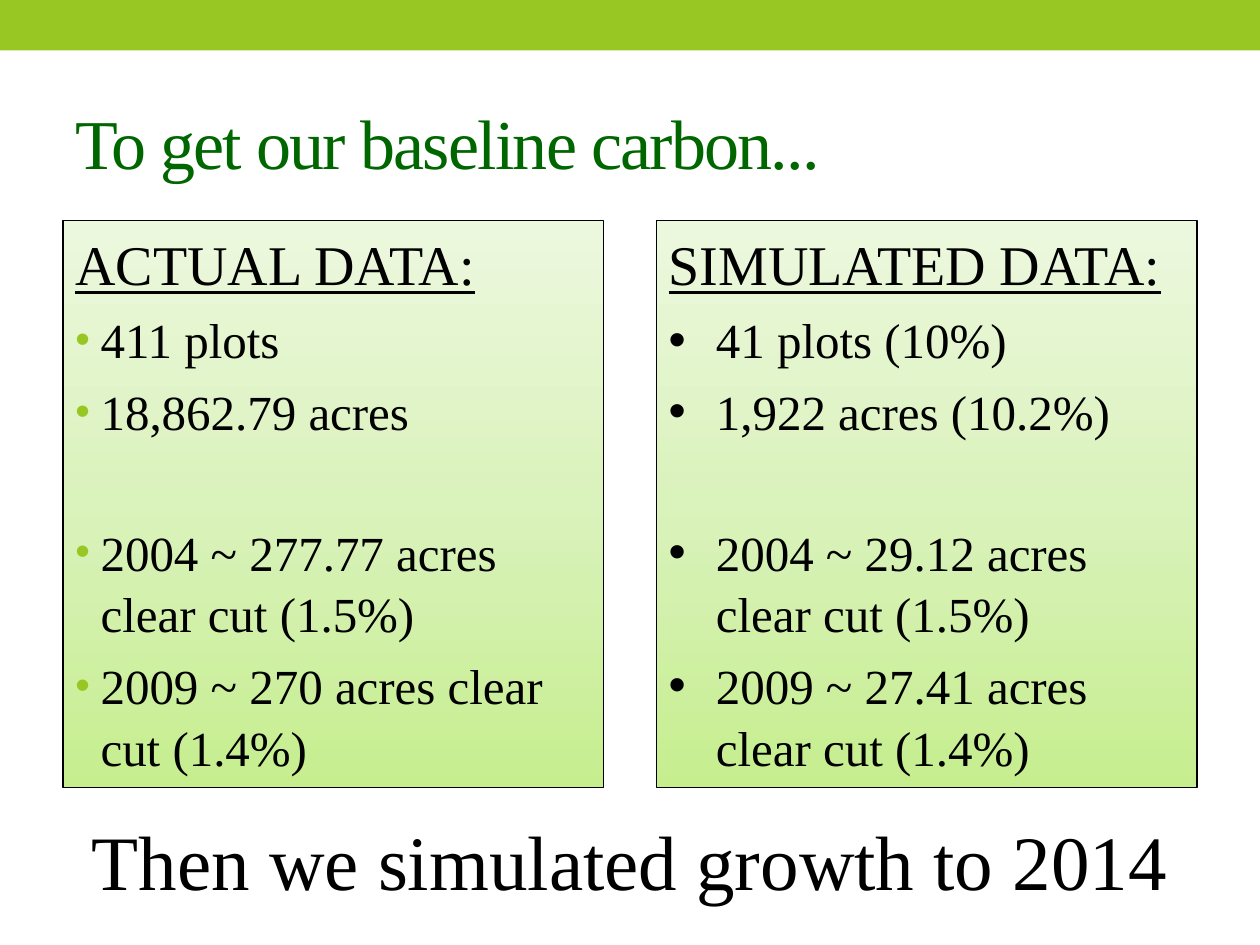
import copy

import pptx
import pptx.dml.color
import pptx.enum.shapes
import pptx.enum.text
import pptx.oxml
import pptx.oxml.ns
import pptx.util

Pt = pptx.util.Pt
ALIGN = pptx.enum.text.PP_ALIGN
ANCHOR = pptx.enum.text.MSO_ANCHOR
RECTANGLE = pptx.enum.shapes.MSO_SHAPE.RECTANGLE
FONT = "Times New Roman"
COLORS = {
    "accent": "98C723",
    "title": "006600",
    "text": "000000",
    "panel_bottom": "C6EE8F",
    "panel_middle": "DAF2BC",
    "panel_top": "ECF8DE",
}


def rgb(name):
    """Return the named colour."""
    return pptx.dml.color.RGBColor.from_string(COLORS[name])


def format_paragraph(paragraph, size, color="text", underline=False):
    """Format every run of a paragraph."""
    for run in paragraph.runs:
        run.font.name = FONT
        run.font.size = Pt(size)
        run.font.color.rgb = rgb(color)
        run.font.underline = underline


def add_rectangle(slide, box):
    """Add a shadowless rectangle in the box."""
    shape = slide.shapes.add_shape(RECTANGLE, *map(Pt, box))
    shape.shadow.inherit = False
    return shape


def add_banner(slide, box):
    """Add the plain band in the box."""
    banner = add_rectangle(slide, box)
    banner.fill.solid()
    banner.fill.fore_color.rgb = rgb("accent")
    banner.line.fill.background()


def add_line_of_text(slide, box, text, size, color, align, spacing=0):
    """Add one vertically centred line of text in the box."""
    frame = slide.shapes.add_textbox(*map(Pt, box)).text_frame
    frame.word_wrap = True
    frame.vertical_anchor = ANCHOR.MIDDLE
    frame.text = text
    paragraph = frame.paragraphs[0]
    paragraph.alignment = align
    format_paragraph(paragraph, size, color)
    if spacing:
        paragraph.runs[0].font._element.set("spc", str(spacing * 100))


def fill_gradient(shape):
    """Fill a shape with the three panel greens, from bottom to top."""
    shape.fill.gradient()
    shape.fill.gradient_angle = 90
    stop_list = shape._element.spPr.find(".//" + pptx.oxml.ns.qn("a:gsLst"))
    stop_list.append(copy.deepcopy(stop_list[0]))
    names = ("panel_bottom", "panel_middle", "panel_top")
    for index, (stop, name) in enumerate(zip(shape.fill.gradient_stops, names)):
        stop.color.rgb = rgb(name)
        stop.position = index / 2


def add_bullet(paragraph, indent, color, percent):
    """Give a paragraph a hanging bullet."""
    properties = paragraph._p.get_or_add_pPr()
    properties.set("marL", str(Pt(indent)))
    properties.set("indent", str(-Pt(indent)))
    namespace = pptx.oxml.ns.nsdecls("a")
    for markup in (
        f'<a:buClr {namespace}><a:srgbClr val="{COLORS[color]}"/></a:buClr>',
        f'<a:buSzPct {namespace} val="{percent * 1000}"/>',
        f'<a:buFont {namespace} typeface="Arial"/>',
        f'<a:buChar {namespace} char="•"/>',
    ):
        properties.append(pptx.oxml.parse_xml(markup))


def add_panel(slide, box, heading, groups, indent, bullet_color, bullet_percent):
    """Add a gradient panel with a heading and groups of bullets."""
    panel = add_rectangle(slide, box)
    fill_gradient(panel)
    panel.line.color.rgb = rgb("text")
    panel.line.width = Pt(0.75)
    frame = panel.text_frame
    frame.word_wrap = True
    frame.vertical_anchor = ANCHOR.TOP
    frame.text = heading
    title = frame.paragraphs[0]
    title.alignment = ALIGN.LEFT
    title.line_spacing = 1.05
    title.space_before = Pt(6.4)
    format_paragraph(title, 32, underline=True)
    for group_index, group in enumerate(groups):
        for item_index, item in enumerate(group):
            paragraph = frame.add_paragraph()
            paragraph.text = item
            paragraph.alignment = ALIGN.LEFT
            paragraph.line_spacing = 1.05
            starts_later_group = group_index > 0 and item_index == 0
            paragraph.space_before = Pt(45 if starts_later_group else 5.6)
            add_bullet(paragraph, indent, bullet_color, bullet_percent)
            format_paragraph(paragraph, 28)


def main():
    """Build and save the baseline carbon slide."""
    presentation = pptx.Presentation()
    presentation.slide_width = Pt(720)
    presentation.slide_height = Pt(540)
    slide = presentation.slides.add_slide(presentation.slide_layouts[6])
    add_banner(slide, (0, 0, 720, 28.8))
    add_line_of_text(slide, (36, 42, 648, 78), "To get our baseline carbon...",
                     40, "title", ALIGN.LEFT, -1)
    actual = (
        ("411 plots", "18,862.79 acres"),
        ("2004 ~ 277.77 acres clear cut (1.5%)", "2009 ~ 270 acres clear cut (1.4%)"),
    )
    simulated = (
        ("41 plots (10%)", "1,922 acres (10.2%)"),
        ("2004 ~ 29.12 acres clear cut (1.5%)", "2009 ~ 27.41 acres clear cut (1.4%)"),
    )
    add_panel(slide, (36, 126, 309, 324), "ACTUAL DATA:", actual, 14.4, "accent", 85)
    add_panel(slide, (375, 126, 309, 324), "SIMULATED DATA:", simulated, 27, "text", 100)
    add_line_of_text(slide, (36, 450, 648, 83), "Then we simulated growth to 2014",
                     44, "text", ALIGN.CENTER)
    presentation.save("out.pptx")


if __name__ == "__main__":
    main()
